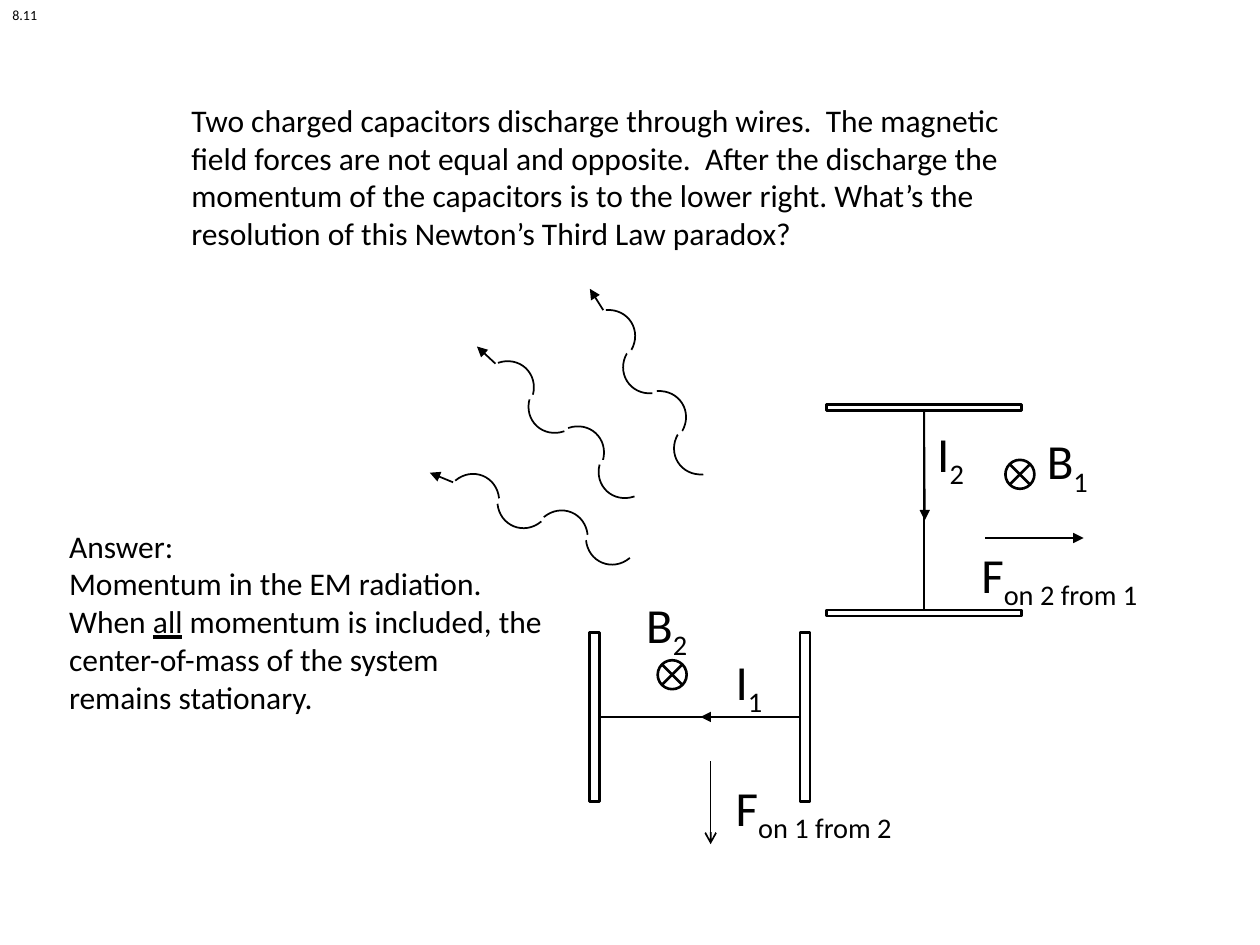
from dataclasses import dataclass
from math import cos, radians, sin

from lxml import etree
from pptx import Presentation
from pptx.dml.color import RGBColor
from pptx.enum.shapes import MSO_CONNECTOR, MSO_SHAPE
from pptx.enum.text import MSO_AUTO_SIZE
from pptx.oxml.ns import qn
from pptx.util import Inches, Pt

RECTANGLE, ARC = MSO_SHAPE.RECTANGLE, MSO_SHAPE.ARC
INTO_PAGE = MSO_SHAPE.FLOWCHART_SUMMING_JUNCTION
STRAIGHT = MSO_CONNECTOR.STRAIGHT
FIT_SHAPE = MSO_AUTO_SIZE.SHAPE_TO_FIT_TEXT
TOP, LEFT, BOTTOM, RIGHT = range(4)


@dataclass(frozen=True)
class Theme:
    font: str = "Calibri"
    ink: RGBColor = RGBColor(0, 0, 0)
    body: int = 18
    symbol: int = 28
    number: int = 8
    thin: float = 1
    thick: float = 1.5


THEME = Theme()

NUMBER = [[("8.11", "")]]
QUESTION = [[(
    "Two charged capacitors discharge through wires.  The magnetic field forces "
    "are not equal and opposite.  After the discharge the momentum of the "
    "capacitors is to the lower right. What’s the resolution of this Newton’s "
    "Third Law paradox?", "")]]
ANSWER = [
    [("Answer:", "")],
    [("Momentum in the EM radiation.", "")],
    [("When ", ""), ("all", "underline"),
     (" momentum is included, the center-of-mass of the system remains stationary.", "")],
]
SYMBOLS = [
    ("I", "1", (5.74, 5.12, 0.46, 0.57)),
    ("I", "2", (7.34, 3.31, 0.46, 0.57)),
    ("B", "2", (5.03, 4.67, 0.61, 0.57)),
    ("B", "1", (8.21, 3.37, 0.61, 0.57)),
    ("F", "on 1 from 2", (5.74, 6.12, 1.76, 0.57)),
    ("F", "on 2 from 1", (7.69, 4.27, 1.76, 0.57)),
]
CAPACITORS = [
    {"source": (6.35, 5.02, 0.08, 1.34), "sink": (4.68, 5.02, 0.08, 1.34),
     "sides": (LEFT, RIGHT), "current_tip": (5.56, 5.69)},
    {"source": (6.56, 3.21, 1.55, 0.05), "sink": (6.56, 4.84, 1.55, 0.05),
     "sides": (BOTTOM, TOP), "current_tip": (7.34, 4.13)},
]
FIELDS = [(5.22, 5.24), (7.98, 3.65)]
FIELD_SIZE = 0.23
FORCES = [((5.64, 6.04), (5.64, 6.7), "arrow"),
          ((7.82, 4.27), (8.6, 4.27), "triangle")]

WAVES = [(3.53, 3.76, 22.4), (4.6, 2.45, 57.9), (3.8, 2.86, 42.9)]
ARC_SIZE = (0.43, 0.46)
ARC_ENDS = (126.26, 197.11)
WAVELENGTH = 0.76
TROUGH_SHIFT, TROUGH_TURN = 0.42, -26
HEAD_RADIUS, HEAD_TURN = 0.22, 205
HEAD_LENGTH = 0.2


def move(point, distance, angle):
    return (point[0] + distance * cos(radians(angle)),
            point[1] + distance * sin(radians(angle)))


def add_outline(slide, kind, box, width=THEME.thick):
    shape = slide.shapes.add_shape(kind, *map(Inches, box))
    shape.shadow.inherit = False
    shape.fill.background()
    shape.line.color.rgb = THEME.ink
    shape.line.width = Pt(width)
    return shape


def add_line(slide, start, end, head=None):
    connector = slide.shapes.add_connector(STRAIGHT, *map(Inches, (*start, *end)))
    connector.line.color.rgb = THEME.ink
    connector.line.width = Pt(THEME.thin)
    properties = connector._element.spPr
    etree.SubElement(properties, qn("a:effectLst"))
    if head:
        etree.SubElement(properties.find(qn("a:ln")), qn("a:tailEnd"), type=head)
    return connector


def add_text(slide, box, paragraphs, size, wrap=False):
    frame = slide.shapes.add_textbox(*map(Inches, box)).text_frame
    frame.word_wrap = wrap
    frame.auto_size = FIT_SHAPE
    for index, runs in enumerate(paragraphs):
        paragraph = frame.add_paragraph() if index else frame.paragraphs[0]
        paragraph.font.name = THEME.font
        paragraph.font.size = Pt(size)
        paragraph.font.color.rgb = THEME.ink
        for text, style in runs:
            run = paragraph.add_run()
            run.text = text
            if style == "underline":
                run.font.underline = True
            elif style == "subscript":
                run._r.get_or_add_rPr().set("baseline", "-25000")


def add_capacitor(slide, source, sink, sides, current_tip):
    start_plate = add_outline(slide, RECTANGLE, source)
    end_plate = add_outline(slide, RECTANGLE, sink)
    wire = add_line(slide, current_tip, current_tip)
    wire.begin_connect(start_plate, sides[0])
    wire.end_connect(end_plate, sides[1])
    current = add_line(slide, current_tip, current_tip, "triangle")
    current.begin_connect(start_plate, sides[0])


def add_wave(slide, left, top, angle):
    for period in range(2):
        crest = move((left, top), period * WAVELENGTH, angle)
        trough = move(crest, TROUGH_SHIFT, angle + TROUGH_TURN)
        for corner, rotation in ((crest, angle), (trough, angle + 180)):
            arc = add_outline(slide, ARC, (*corner, *ARC_SIZE), THEME.thin)
            arc.adjustments[0], arc.adjustments[1] = ARC_ENDS
            arc.rotation = rotation
    center = (left + ARC_SIZE[0] / 2, top + ARC_SIZE[1] / 2)
    start = move(center, HEAD_RADIUS, angle + HEAD_TURN)
    add_line(slide, start, move(start, HEAD_LENGTH, angle + 180), "triangle")


def main():
    presentation = Presentation()
    presentation.slide_width, presentation.slide_height = Inches(10), Inches(7.5)
    slide = presentation.slides.add_slide(presentation.slide_layouts[6])

    for capacitor in CAPACITORS:
        add_capacitor(slide, **capacitor)
    for corner in FIELDS:
        add_outline(slide, INTO_PAGE, (*corner, FIELD_SIZE, FIELD_SIZE))
    for force in FORCES:
        add_line(slide, *force)
    for wave in WAVES:
        add_wave(slide, *wave)

    for letter, subscript, box in SYMBOLS:
        add_text(slide, box, [[(letter, ""), (subscript, "subscript")]], THEME.symbol)
    add_text(slide, (1.42, 0.75, 6.67, 1.92), QUESTION, THEME.body, wrap=True)
    add_text(slide, (0.45, 4.13, 4, 1.62), ANSWER, THEME.body, wrap=True)
    add_text(slide, (0, 0, 0.4, 0.24), NUMBER, THEME.number)

    presentation.save("out.pptx")


if __name__ == "__main__":
    main()
